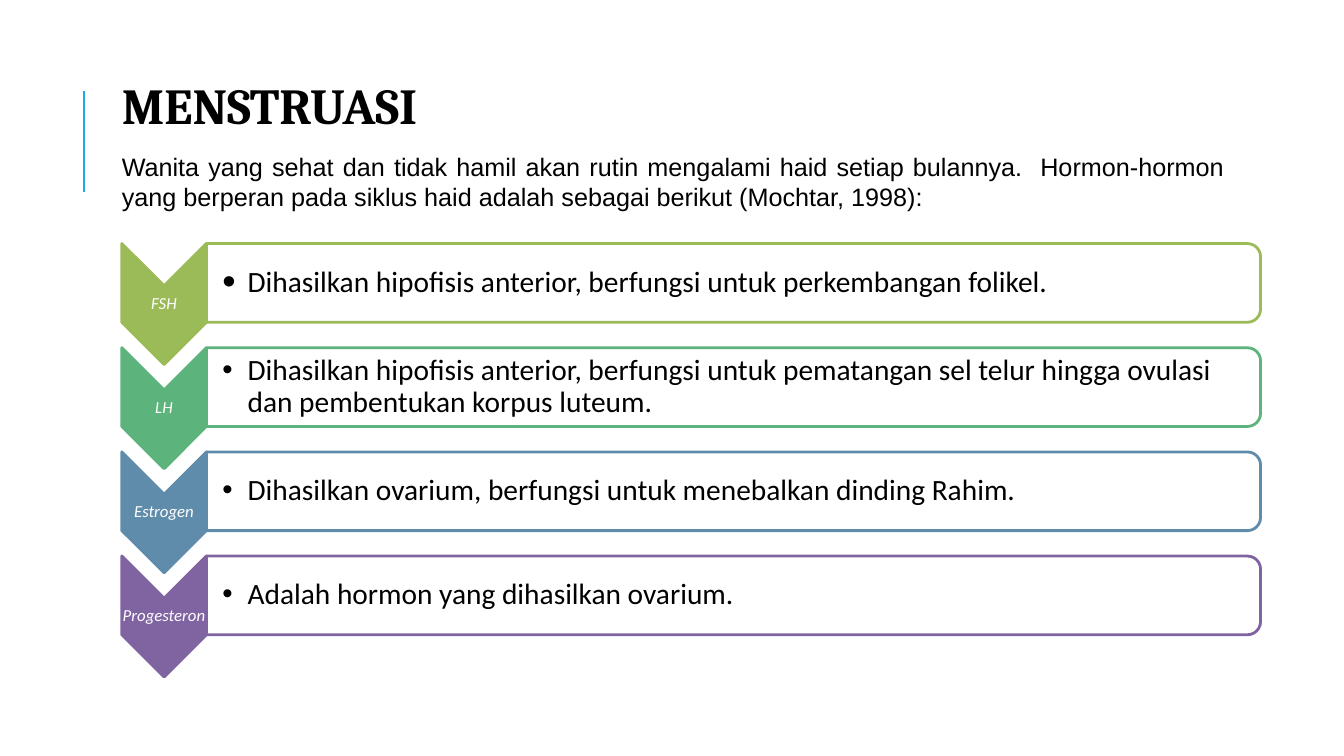
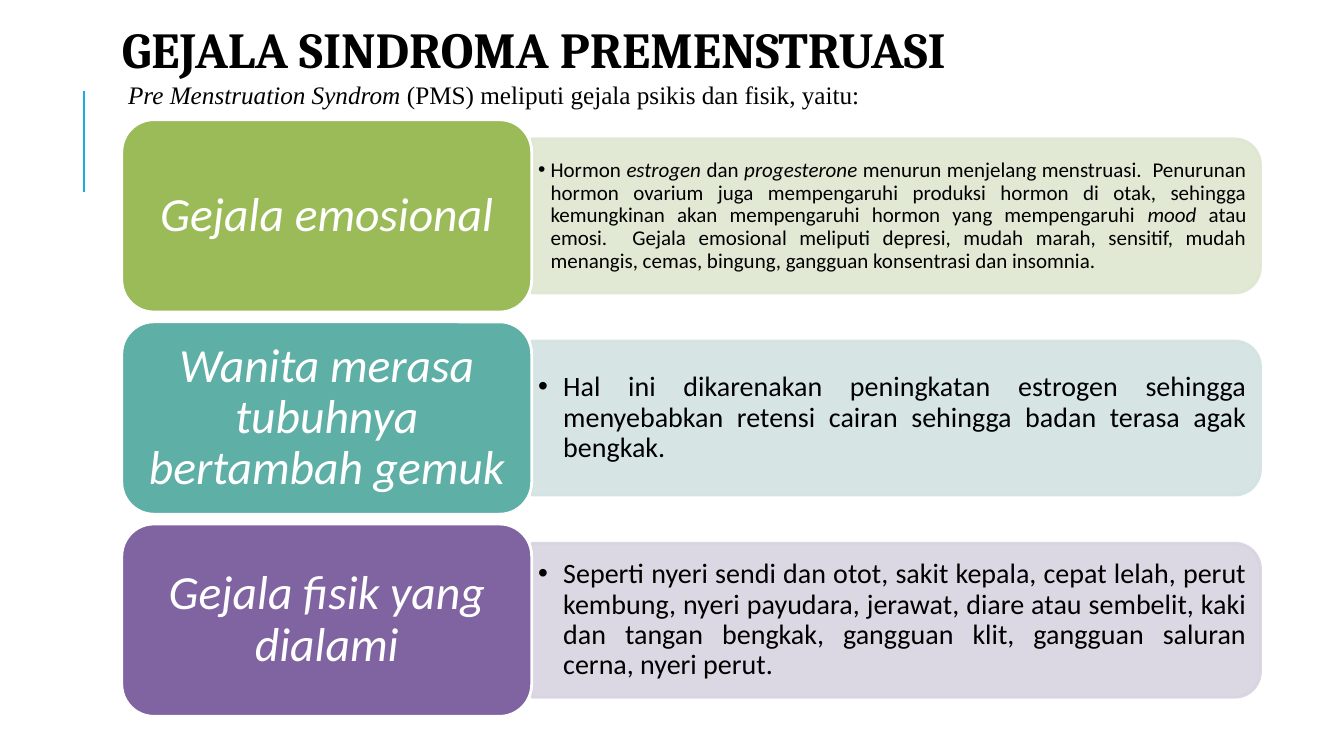
from pptx import Presentation
from pptx.dml.color import RGBColor
from pptx.enum.shapes import MSO_CONNECTOR as CONNECTOR, MSO_SHAPE as SHAPE
from pptx.enum.text import MSO_ANCHOR as ANCHOR, PP_ALIGN as ALIGN
from pptx.oxml.ns import qn
from pptx.util import Pt
from lxml.etree import SubElement

COLOURS = {
    "text": "000000", "white": "FFFFFF", "accent": "1CACE3",
    "lime": "9BBB59", "green": "5CB37C", "blue": "608CAB", "purple": "8064A2",
    "teal": "5EAFA6", "pale_lime": "DEE7D1", "pale_teal": "D2E3E2", "pale_purple": "D8D3E0",
}
LEFT = 87
BODY_FONT = "Calibri"

# label, colour, description, bullet size in percent
HORMONES = [
    ("FSH", "lime",
     "Dihasilkan hipofisis anterior, berfungsi untuk perkembangan folikel.", 130),
    ("LH", "green",
     "Dihasilkan hipofisis anterior, berfungsi untuk pematangan sel telur hingga ovulasi "
     "dan pembentukan korpus luteum.", 100),
    ("Estrogen", "blue", "Dihasilkan ovarium, berfungsi untuk menebalkan dinding Rahim.", 100),
    ("Progesteron", "purple", "Adalah hormon yang dihasilkan ovarium.", 100),
]

# heading, colour, pale colour, text size, bullet indent, (text, italic) runs
SYMPTOMS = [
    ("Gejala emosional", "lime", "pale_lime", 15, 9, [
        ("Hormon ", False), ("estrogen", True), (" dan ", False), ("progesterone ", True),
        ("menurun menjelang menstruasi.  Penurunan hormon ovarium juga mempengaruhi produksi "
         "hormon di otak, sehingga kemungkinan akan mempengaruhi hormon yang mempengaruhi ", False),
        ("mood", True),
        (" atau emosi.  Gejala emosional meliputi depresi, mudah marah, sensitif, mudah "
         "menangis, cemas, bingung, gangguan konsentrasi dan insomnia.", False)]),
    ("Wanita merasa tubuhnya bertambah gemuk", "teal", "pale_teal", 20, 18, [
        ("Hal ini dikarenakan peningkatan estrogen sehingga menyebabkan retensi cairan "
         "sehingga badan terasa agak bengkak.", False)]),
    ("Gejala fisik yang dialami", "purple", "pale_purple", 20, 18, [
        ("Seperti nyeri sendi dan otot, sakit kepala, cepat lelah, perut kembung, nyeri "
         "payudara, jerawat, diare atau sembelit, kaki dan tangan bengkak, gangguan klit, "
         "gangguan saluran cerna, nyeri perut.", False)]),
]


def rgb(colour):
    return RGBColor.from_string(COLOURS[colour])


def write(frame, runs, size, font=BODY_FONT, colour="text", align=ALIGN.LEFT,
          anchor=ANCHOR.MIDDLE, insets=(0, 0, 0, 0), spacing=0.9, bold=False):
    """Fill a text frame with (text, italic) runs and return its paragraph."""
    frame.word_wrap = True
    frame.vertical_anchor = anchor
    frame.margin_left, frame.margin_top, frame.margin_right, frame.margin_bottom = map(Pt, insets)
    paragraph = frame.paragraphs[0]
    paragraph.alignment = align
    paragraph.line_spacing = spacing
    for text, italic in runs:
        run = paragraph.add_run()
        run.text = text
        run.font.name, run.font.size = font, Pt(size)
        run.font.bold, run.font.italic = bold, italic
        run.font.color.rgb = rgb(colour)
    return paragraph


def add_text(slide, box, runs, size, **style):
    frame = slide.shapes.add_textbox(*map(Pt, box)).text_frame
    return write(frame, runs, size, **style)


def add_bullet(paragraph, indent, percent=100):
    properties = paragraph._p.get_or_add_pPr()
    properties.set("marL", str(Pt(indent)))
    properties.set("indent", str(-Pt(indent)))
    SubElement(properties, qn("a:buSzPct"), val=str(percent * 1000))
    SubElement(properties, qn("a:buFont"), typeface="Arial")
    SubElement(properties, qn("a:buChar"), char="•")


def add_shape(slide, kind, box, fill, line):
    shape = slide.shapes.add_shape(kind, *map(Pt, box))
    shape.shadow.inherit = False
    shape.fill.solid()
    shape.fill.fore_color.rgb = rgb(fill)
    shape.line.color.rgb = rgb(line)
    shape.line.width = Pt(2)
    return shape


def add_turned_shape(slide, kind, box, fill, line):
    """Add a shape turned by 90 degrees that fills the box as seen on the slide."""
    left, top, width, height = box
    shift = (width - height) / 2
    shape = add_shape(slide, kind, (left + shift, top - shift, height, width), fill, line)
    shape.rotation = 90
    return shape


def set_opacity(shape, percent):
    for colour in shape._element.spPr.iter(qn("a:srgbClr")):
        SubElement(colour, qn("a:alpha"), val=str(percent * 1000))


def start_slide(deck, title, title_top):
    """Add a slide with the shared accent rule and title style."""
    slide = deck.slides.add_slide(deck.slide_layouts[5])
    rule = slide.shapes.add_connector(CONNECTOR.STRAIGHT, Pt(60), Pt(136.8), Pt(60), Pt(64.8))
    rule.line.color.rgb = rgb("accent")
    rule.line.width = Pt(1.44)
    SubElement(rule._element.spPr, qn("a:effectLst"))
    heading = slide.shapes.title
    heading.left, heading.top, heading.width, heading.height = map(Pt, (LEFT, title_top, 745, 44))
    write(heading.text_frame, [(title, False)], 36, font="Cambria",
          anchor=ANCHOR.TOP, spacing=1.0, bold=True)
    return slide


def add_hormone(slide, top, label, colour, description, bullet_percent):
    chevron_width, chevron_height, bar_height = 60.4, 86.4, 56.2
    label_overhang = 3
    bar_left = LEFT + chevron_width
    add_turned_shape(slide, SHAPE.CHEVRON, (LEFT, top, chevron_width, chevron_height),
                     colour, colour)
    add_turned_shape(slide, SHAPE.ROUND_2_SAME_RECTANGLE,
                     (bar_left, top, 753, bar_height), "white", colour)
    add_text(slide, (LEFT - label_overhang, top, chevron_width + 2 * label_overhang,
                     chevron_height),
             [(label, True)], 12, colour="white", align=ALIGN.CENTER)
    paragraph = add_text(slide, (bar_left, top, 750, bar_height), [(description, False)], 21,
                         insets=(11.5, 0.75, 0.75, 0.75))
    add_bullet(paragraph, 18, bullet_percent)


def add_symptom(slide, top, heading, colour, pale, size, indent, runs):
    card_width, card_height, bar_height = 292.8, 137.4, 110
    bar_left, bar_top = LEFT + card_width, top + (card_height - bar_height) / 2
    bar = add_turned_shape(slide, SHAPE.ROUND_2_SAME_RECTANGLE,
                           (bar_left, bar_top, 520.5, bar_height), pale, pale)
    set_opacity(bar, 90)
    paragraph = add_text(slide, (bar_left, bar_top, 515, bar_height), runs, size,
                         align=ALIGN.JUSTIFY, insets=(4.5, 2, 4.5, 2))
    add_bullet(paragraph, indent)
    card = add_shape(slide, SHAPE.ROUNDED_RECTANGLE,
                     (LEFT, top, card_width, card_height), colour, "white")
    write(card.text_frame, [(heading, True)], 34, colour="white", align=ALIGN.CENTER,
          insets=(10, 5, 10, 5))


def build_menstruation(deck):
    slide = start_slide(deck, "MENSTRUASI", 52.6)
    intro = ("Wanita yang sehat dan tidak hamil akan rutin mengalami haid setiap bulannya.  "
             "Hormon-hormon yang berperan pada siklus haid adalah sebagai berikut "
             "(Mochtar, 1998):")
    add_text(slide, (LEFT, 108, 787.5, 66), [(intro, False)], 18, font="Arial",
             align=ALIGN.JUSTIFY, anchor=ANCHOR.TOP, spacing=1.0)
    for row, hormone in enumerate(HORMONES):
        add_hormone(slide, 174 + row * 74.4, *hormone)


def build_symptoms(deck):
    slide = start_slide(deck, "GEJALA SINDROMA PREMENSTRUASI", 13)
    add_text(slide, (LEFT + 4.5, 57, 580, 28),
             [("Pre Menstruation Syndrom ", True),
              ("(PMS) meliputi gejala psikis dan fisik, yaitu:", False)],
             18, font="Times New Roman", anchor=ANCHOR.TOP, spacing=1.0)
    for row, symptom in enumerate(SYMPTOMS):
        add_symptom(slide, 85.5 + row * 144.4, *symptom)


def main():
    deck = Presentation()
    deck.slide_width, deck.slide_height = Pt(960), Pt(540)
    build_menstruation(deck)
    build_symptoms(deck)
    deck.save("out.pptx")


if __name__ == "__main__":
    main()
